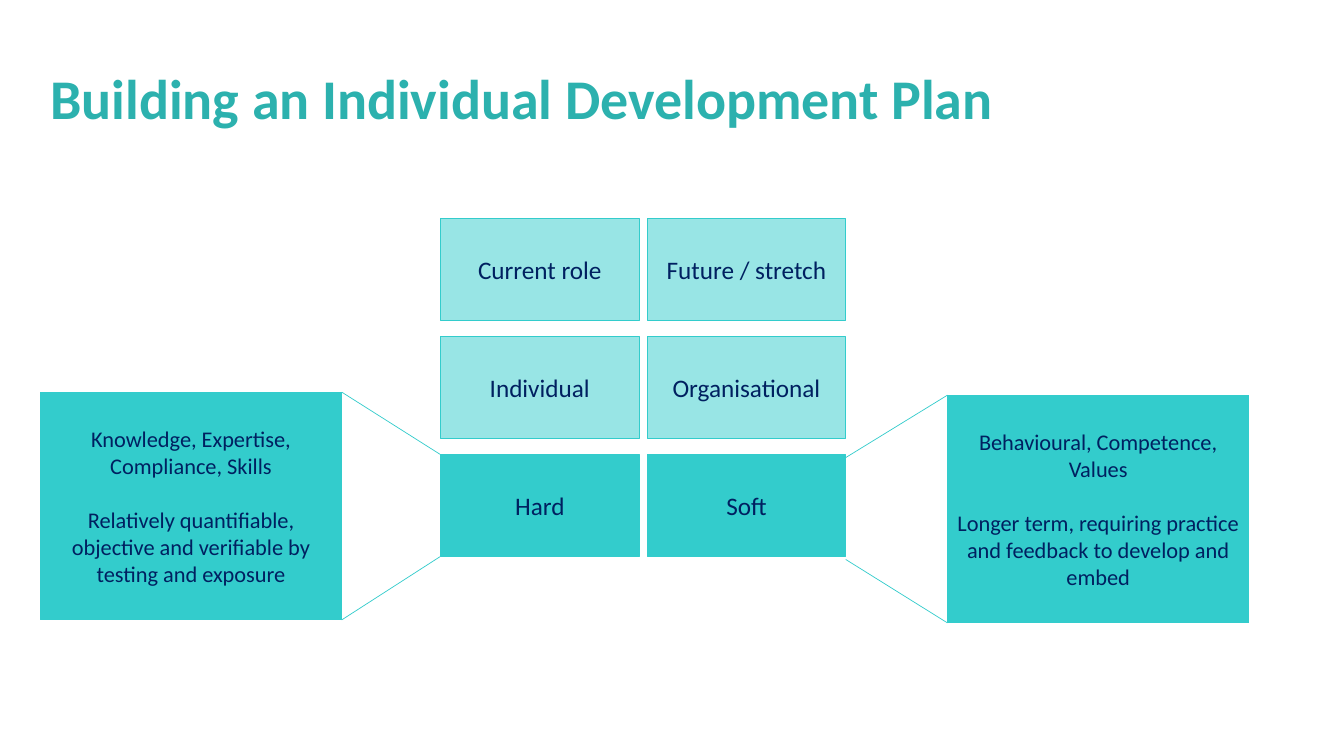
from lxml import etree
from pptx import Presentation, util as u
from pptx.dml.color import RGBColor
from pptx.enum import shapes, text
from pptx.oxml.ns import qn

COLORS = {"title": "2CB1AE", "box": "33CCCC", "ink": "002060"}
COLUMNS, ROWS = 40, 30  # slide grid


class SlideBuilder:
    font_name = "Calibri"

    def __init__(self, presentation):
        self.column = presentation.slide_width / COLUMNS
        self.row = presentation.slide_height / ROWS
        self.slide = presentation.slides.add_slide(presentation.slide_layouts[6])

    def place(self, column, row):
        return u.Emu(round(column * self.column)), u.Emu(round(row * self.row))

    def color(self, name):
        return RGBColor.from_string(COLORS[name])

    def set_text(self, shape, lines, size, color, align, bold=False):
        frame = shape.text_frame
        frame.word_wrap = True
        frame.vertical_anchor = text.MSO_ANCHOR.MIDDLE
        frame.text = "\n".join(lines)
        for index, paragraph in enumerate(frame.paragraphs):
            paragraph.alignment = align
            if index:
                paragraph.space_before = u.Pt(size * 1.22)
            font = paragraph.font
            font.name, font.size, font.bold = self.font_name, u.Pt(size), bold
            font.color.rgb = self.color(color)

    def title(self, line, column, row, width, height):
        shape = self.slide.shapes.add_textbox(
            *self.place(column, row), *self.place(width, height))
        self.set_text(shape, [line], 40, "title", text.PP_ALIGN.LEFT, bold=True)

    def box(self, lines, column, row, width, height, size=18, opacity=100):
        shape = self.slide.shapes.add_shape(
            shapes.MSO_SHAPE.RECTANGLE,
            *self.place(column, row), *self.place(width, height))
        shape.shadow.inherit = False
        shape.fill.solid()
        shape.fill.fore_color.rgb = self.color("box")
        if opacity < 100:
            fill_color = shape._element.spPr.find(qn("a:solidFill"))[0]
            etree.SubElement(fill_color, qn("a:alpha"), val=str(opacity * 1000))
        shape.line.color.rgb = self.color("box")
        shape.line.width = u.Pt(0.75)
        self.set_text(shape, lines, size, "ink", text.PP_ALIGN.CENTER)

    def line(self, start, end):
        connector = self.slide.shapes.add_connector(
            shapes.MSO_CONNECTOR.STRAIGHT, *self.place(*start), *self.place(*end))
        connector.line.color.rgb = self.color("box")
        connector.line.width = u.Pt(0.5)
        etree.SubElement(connector._element.spPr, qn("a:effectLst"))


def main():
    presentation = Presentation()
    presentation.slide_width = u.Inches(13.33)
    presentation.slide_height = u.Inches(7.5)
    builder = SlideBuilder(presentation)

    builder.title("Building an Individual Development Plan", 1.2, 0.96, 34.5, 5.8)

    # Matrix of development areas
    left, top, width, height = 13.11, 8.68, 5.91, 4.04
    column_step, row_step = 6.15, 4.68
    matrix = [("Current role", "Future / stretch"),
              ("Individual", "Organisational"),
              ("Hard", "Soft")]
    for row, labels in enumerate(matrix):
        for column, label in enumerate(labels):
            builder.box([label], left + column * column_step, top + row * row_step,
                        width, height, opacity=100 if row == 2 else 50)

    # Callouts: text, panel column, panel edge, matrix edge, downward shift
    panel_width, panel_height, panel_top = 8.97, 9.04, 15.56
    skills_top = top + 2 * row_step
    callouts = [
        (["Knowledge, Expertise, Compliance, Skills",
          "Relatively quantifiable, objective and verifiable by testing and exposure"],
         1.2, 1.2 + panel_width, left, 0),
        (["Behavioural, Competence, Values",
          "Longer term, requiring practice and feedback to develop and embed"],
         28.2, 28.2, left + column_step + width, 0.12),
    ]
    for lines, column, panel_edge, matrix_edge, shift in callouts:
        builder.box(lines, column, panel_top + shift, panel_width, panel_height, size=16)
        for panel_row, matrix_row in [(panel_top, skills_top),
                                      (panel_top + panel_height, skills_top + height)]:
            builder.line((panel_edge, panel_row + shift),
                         (matrix_edge, matrix_row + shift))

    presentation.save("out.pptx")


if __name__ == "__main__":
    main()
